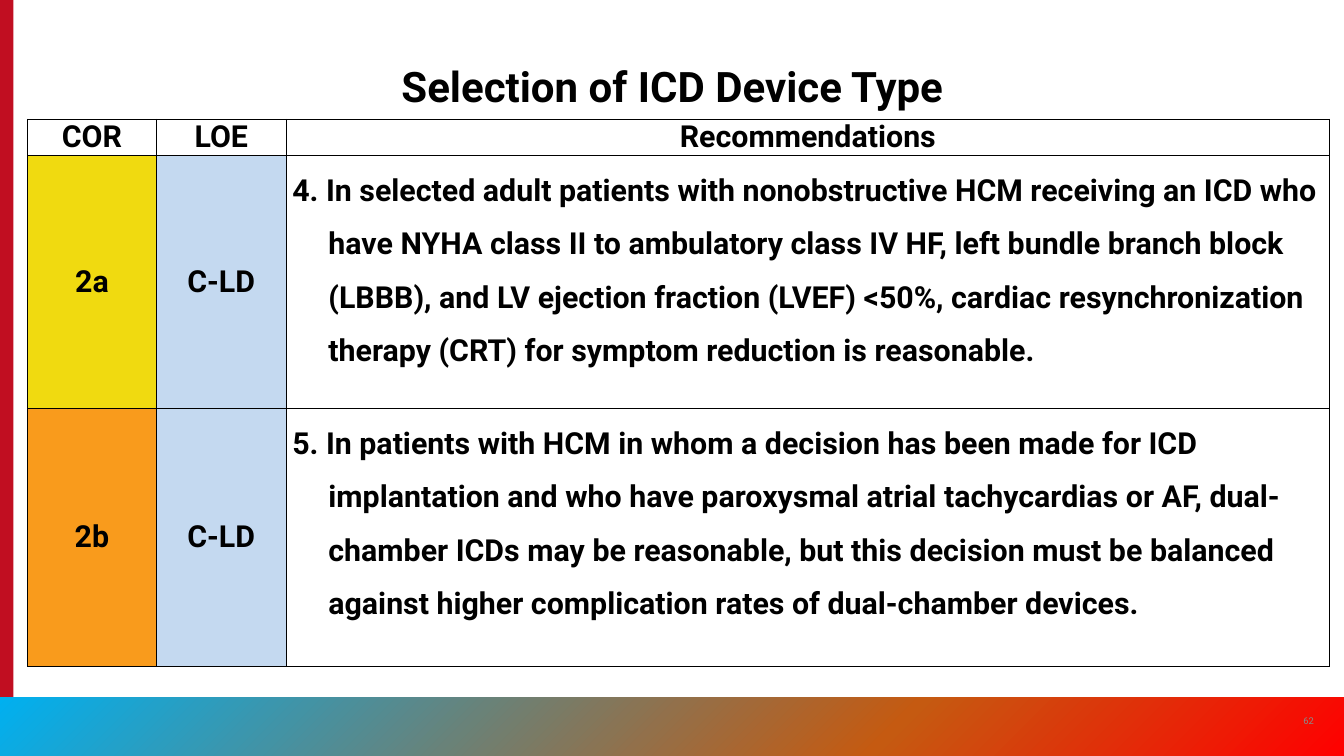
import dataclasses
import typing

import lxml.etree
import pptx
import pptx.dml.color
import pptx.enum.shapes
import pptx.enum.text
import pptx.oxml.ns
import pptx.util

Inches = pptx.util.Inches
Pt = pptx.util.Pt
Align = pptx.enum.text.PP_ALIGN
Anchor = pptx.enum.text.MSO_ANCHOR
qn = pptx.oxml.ns.qn

FONT = "Roboto"
BLACK = "000000"
WHITE = "FFFFFF"
EVIDENCE_BLUE = "C4D9F0"
COLUMN_WIDTHS = (1.53, 1.55, 12.42)
ROW_HEIGHTS = (0.42, 3.01, 3.07)


@dataclasses.dataclass
class Entry:
    text: str
    fill: typing.Optional[str] = WHITE
    anchor: typing.Any = Anchor.TOP
    hanging: bool = False


@dataclasses.dataclass
class Band:
    left: float
    top: float
    width: float
    height: float
    stops: typing.Sequence[typing.Tuple[int, str]]


def colour(value: str) -> pptx.dml.color.RGBColor:
    return pptx.dml.color.RGBColor.from_string(value)


def apply(target: typing.Any, values: typing.Dict[str, typing.Any]) -> None:
    for name, value in values.items():
        setattr(target, name, value)


def write(frame: typing.Any, text: str, size: float, shade: str = BLACK,
          bold: bool = True, align: typing.Any = Align.CENTER) -> typing.Any:
    para = frame.paragraphs[0]
    para.alignment = align
    span = para.add_run()
    span.text = text
    apply(span.font, {"name": FONT, "size": Pt(size), "bold": bold})
    span.font.color.rgb = colour(shade)
    return para


def draw_band(page: typing.Any, band: Band) -> None:
    shape = page.shapes.add_shape(
        pptx.enum.shapes.MSO_SHAPE.RECTANGLE, Inches(band.left), Inches(band.top),
        Inches(band.width), Inches(band.height))
    shape.shadow.inherit = False
    shape.line.fill.background()
    if len(band.stops) == 1:
        shape.fill.solid()
        shape.fill.fore_color.rgb = colour(band.stops[0][1])
        return
    shape.fill.gradient()
    gradient = shape._element.spPr.find(qn("a:gradFill"))
    stop_list = gradient.find(qn("a:gsLst"))
    for stop in list(stop_list):
        stop_list.remove(stop)
    for position, shade in band.stops:
        stop = lxml.etree.SubElement(stop_list, qn("a:gs"), pos=str(position * 1000))
        lxml.etree.SubElement(stop, qn("a:srgbClr"), val=shade)
    direction = gradient.find(qn("a:lin"))
    direction.set("ang", str(45 * 60000))
    direction.set("scaled", "0")


def draw_borders(cell: typing.Any) -> None:
    properties = cell._tc.get_or_add_tcPr()
    for side in ("lnL", "lnR", "lnT", "lnB"):
        line = lxml.etree.SubElement(properties, qn("a:" + side), w=str(Pt(1)))
        solid = lxml.etree.SubElement(line, qn("a:solidFill"))
        lxml.etree.SubElement(solid, qn("a:srgbClr"), val=BLACK)


def fill_cell(cell: typing.Any, entry: Entry) -> None:
    apply(cell, {"margin_left": Inches(0.07), "margin_right": Inches(0.07),
                 "margin_top": 0, "margin_bottom": 0,
                 "vertical_anchor": entry.anchor})
    draw_borders(cell)
    if entry.fill:
        cell.fill.solid()
        cell.fill.fore_color.rgb = colour(entry.fill)
    else:
        cell.fill.background()
    align = Align.LEFT if entry.hanging else Align.CENTER
    para = write(cell.text_frame, entry.text, 26, align=align)
    if entry.hanging:
        para.line_spacing = 1.5
        indent = Inches(0.43)
        properties = para._p.get_or_add_pPr()
        properties.set("marL", str(indent))
        properties.set("indent", str(-indent))


def recommendation(grade: str, shade: str, text: str) -> typing.List[Entry]:
    return [Entry(grade, shade, Anchor.MIDDLE),
            Entry("C-LD", EVIDENCE_BLUE, Anchor.MIDDLE),
            Entry(text, None, hanging=True)]


def draw_table(page: typing.Any, rows: typing.Sequence[typing.Sequence[Entry]]) -> None:
    table = page.shapes.add_table(
        len(ROW_HEIGHTS), len(COLUMN_WIDTHS), Inches(0.33), Inches(1.42),
        Inches(sum(COLUMN_WIDTHS)), Inches(sum(ROW_HEIGHTS))).table
    apply(table, {"first_row": False, "horz_banding": False})
    for column, width in zip(table.columns, COLUMN_WIDTHS):
        column.width = Inches(width)
    for row, height, entries in zip(table.rows, ROW_HEIGHTS, rows):
        row.height = Inches(height)
        for cell, entry in zip(row.cells, entries):
            fill_cell(cell, entry)


BANDS = (
    Band(0, 0, 0.16, 9, [(0, "C10E21")]),
    Band(0, 8.3, 16, 0.7, [(0, "00B0F0"), (66, "C55A11"), (100, "FF0000")]),
)

ROWS = (
    [Entry("COR"), Entry("LOE"), Entry("Recommendations")],
    recommendation(
        "2a", "F0DA10",
        "4. In selected adult patients with nonobstructive HCM receiving an ICD who "
        "have NYHA class II to ambulatory class IV HF, left bundle branch block "
        "(LBBB), and LV ejection fraction (LVEF) <50%, cardiac resynchronization "
        "therapy (CRT) for symptom reduction is reasonable."),
    recommendation(
        "2b", "F99B1C",
        "5. In patients with HCM in whom a decision has been made for ICD "
        "implantation and who have paroxysmal atrial tachycardias or AF, "
        "dual-chamber ICDs may be reasonable, but this decision must be balanced "
        "against higher complication rates of dual-chamber devices."),
)


def main() -> None:
    deck = pptx.Presentation()
    apply(deck, {"slide_width": Inches(16), "slide_height": Inches(9)})
    page = deck.slides.add_slide(deck.slide_layouts[5])

    for band in BANDS:
        draw_band(page, band)

    title = page.shapes.title
    apply(title, {"left": Inches(1.9), "top": Inches(0.67),
                  "width": Inches(12.21), "height": Inches(0.71)})
    apply(title.text_frame, {"vertical_anchor": Anchor.TOP, "word_wrap": True,
                             "auto_size": pptx.enum.text.MSO_AUTO_SIZE.SHAPE_TO_FIT_TEXT})
    write(title.text_frame, "Selection of ICD Device Type", 36)

    draw_table(page, ROWS)

    number = page.shapes.add_textbox(
        Inches(15.34), Inches(8.34), Inches(0.48), Inches(0.48))
    apply(number.text_frame, {"vertical_anchor": Anchor.MIDDLE, "word_wrap": True})
    write(number.text_frame, "62", 8, "8A8B8A", bold=False)

    deck.save("out.pptx")


if __name__ == "__main__":
    main()
